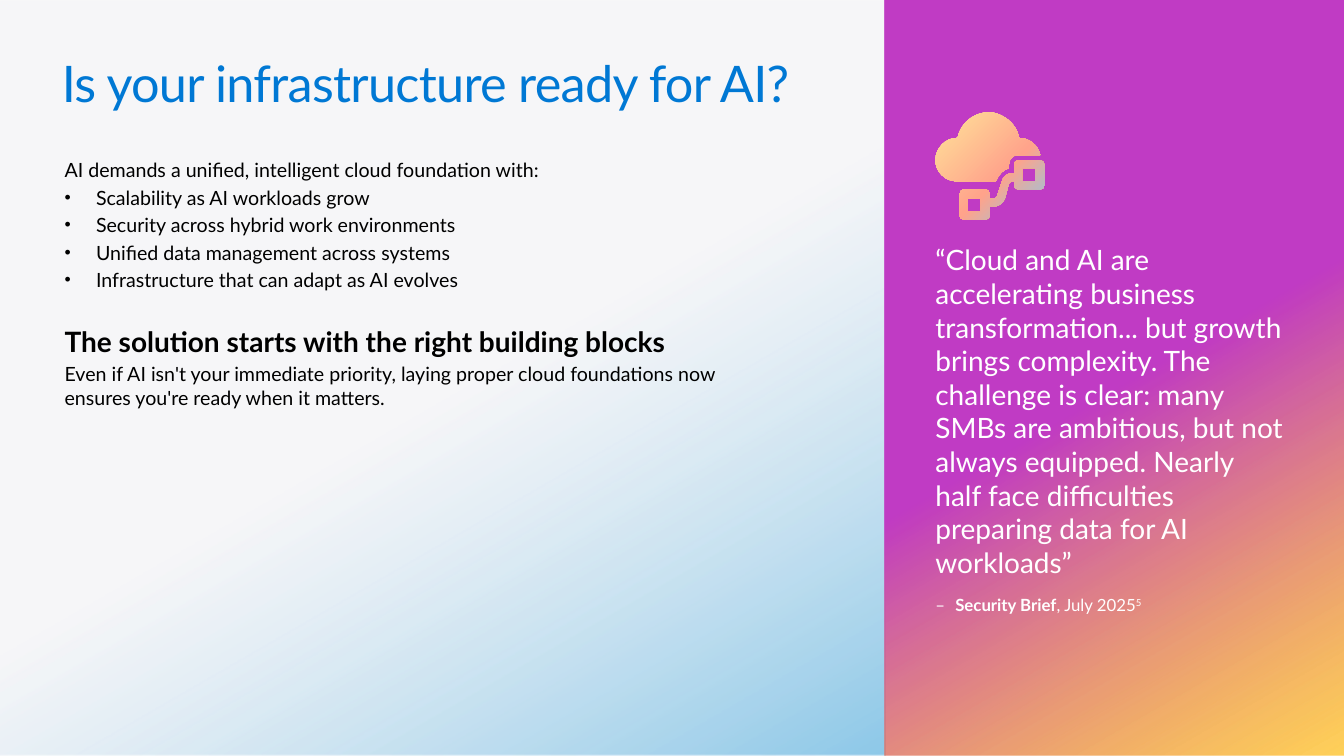
from itertools import chain

from lxml import etree
from pptx import Presentation
from pptx import util as u
from pptx.dml import color
from pptx.enum import shapes, text
from pptx.oxml import ns

FONT = "Lato"
LEFT, RIGHT = 46.1, 668.16  # text edges of the two panels
SPLIT = 632.16              # border between the panels

# Icon outlines in 1/100 inch: two numbers are a line, six are a curve
CLOUD = [
    (22, 25), (25, 9, 41, -3, 58, 0), (71, 3, 81, 13, 83, 25),
    (93, 25, 102, 32, 104, 42), (82, 42), (77, 42, 73, 46, 73, 51), (73, 55),
    (67, 57, 63, 61, 61, 66), (60, 68), (21, 68), (10, 68, 0, 59, 0, 47),
    (0, 35, 10, 25, 21, 25)]
NODES = [
    (78, 51), (78, 49, 80, 47, 82, 47), (104, 47), (106, 47, 108, 49, 108, 51),
    (108, 72), (108, 75, 106, 76, 104, 76), (82, 76), (80, 76, 78, 75, 78, 72),
    (78, 68), (76, 68), (75, 68, 74, 69, 73, 70), (69, 85),
    (67, 90, 63, 93, 58, 93), (54, 93), (54, 102), (54, 104, 52, 106, 50, 106),
    (28, 106), (26, 106, 24, 104, 24, 102), (24, 81), (24, 78, 26, 76, 28, 76),
    (50, 76), (52, 76, 54, 78, 54, 81), (54, 85), (58, 85),
    (59, 85, 61, 84, 61, 83), (66, 68), (67, 63, 72, 60, 76, 60), (78, 60)]


def rgb(code):
    return color.RGBColor.from_string(code)


def blend(shape, stops, angle=None):
    """Gradient of (place, colour, opacity); round when no angle is given."""
    props = shape._element.spPr
    fill = etree.Element(ns.qn("a:gradFill"), rotWithShape="1")
    row = etree.SubElement(fill, ns.qn("a:gsLst"))
    for place, code, alpha in stops:
        stop = etree.SubElement(row, ns.qn("a:gs"), pos=str(place * 1000))
        tint = etree.SubElement(stop, ns.qn("a:srgbClr"), val=code)
        if alpha < 100:
            etree.SubElement(tint, ns.qn("a:alpha"), val=str(alpha * 1000))
    if angle is None:
        way = etree.SubElement(fill, ns.qn("a:path"), path="circle")
        etree.SubElement(way, ns.qn("a:fillToRect"), l="100000", t="100000")
    else:
        etree.SubElement(fill, ns.qn("a:lin"), ang=str(angle * 60000), scaled="0")
    # The fill belongs right after the geometry
    props.insert(2, fill)
    shape.line.fill.background()
    shape.shadow.inherit = False


def panel(slide, x, wide, stops):
    box = slide.shapes.add_shape(
        shapes.MSO_SHAPE.RECTANGLE, u.Pt(x), 0, u.Pt(wide), u.Pt(540))
    blend(box, stops, 60)


def frame(slide, x, y, wide, high):
    body = slide.shapes.add_textbox(
        u.Pt(x), u.Pt(y), u.Pt(wide), u.Pt(high)).text_frame
    body.word_wrap = True
    body.vertical_anchor = text.MSO_ANCHOR.TOP
    body.margin_left = body.margin_right = 0
    body.margin_top = body.margin_bottom = 0
    return body


def para(body, first=False, before=0, hang=0, bullet=None):
    line = body.paragraphs[0] if first else body.add_paragraph()
    line.alignment = text.PP_ALIGN.LEFT
    if before:
        line.space_before = u.Pt(before)
    props = line._p.get_or_add_pPr()
    if hang:
        props.set("marL", str(u.Pt(hang)))
        props.set("indent", str(-u.Pt(hang)))
    if bullet:
        etree.SubElement(props, ns.qn("a:buSzPct"), val="90000")
        etree.SubElement(props, ns.qn("a:buFont"), typeface="Arial")
        etree.SubElement(props, ns.qn("a:buChar"), char=bullet)
    return line


def add(line, words, size, code, bold=False, **extra):
    run = line.add_run()
    run.text = words
    run.font.name = FONT
    run.font.size = u.Pt(size)
    run.font.bold = bold
    run.font.color.rgb = rgb(code)
    for key, value in extra.items():
        run._r.get_or_add_rPr().set(key, str(value))


def square(x, y, side=13):
    return [(x, y), (x, y + side), (x + side, y + side), (x + side, y)]


def scale(nums):
    return [u.Pt(n * 0.72) for n in nums]


def bend(shape, steps):
    """Turn the lines that stand for six numbers into curves."""
    marks = list(shape._element.iter(ns.qn("a:moveTo"), ns.qn("a:lnTo")))
    for mark, step in zip(marks, steps):
        if len(step) == 6:
            nums = scale(step)
            curve = etree.Element(ns.qn("a:cubicBezTo"))
            for x, y in zip(nums[::2], nums[1::2]):
                etree.SubElement(curve, ns.qn("a:pt"), x=str(x), y=str(y))
            mark.getparent().replace(mark, curve)


def icon(slide, x, y):
    rings = [CLOUD, NODES, square(86, 55), square(32, 85)]
    pen = slide.shapes.build_freeform(*scale(CLOUD[0]))
    for ring in rings:
        ends = [scale(step[-2:]) for step in ring]
        if ring is not CLOUD:
            pen.move_to(*ends[0])
        pen.add_line_segments(ends[1:], close=True)
    shape = pen.convert_to_shape(u.Pt(x), u.Pt(y))
    bend(shape, chain(*rings))
    blend(shape, [(0, "8DC8E8", 100), (40, "FFA38B", 100), (99, "FFE399", 100)])


def main():
    deck = Presentation()
    deck.slide_width, deck.slide_height = u.Pt(960), u.Pt(540)
    slide = deck.slides.add_slide(deck.slide_layouts[6])

    # Left panel and title
    panel(slide, 0, SPLIT, [(51, "F4F3F5", 68), (100, "8DC8E8", 100)])
    title = frame(slide, 44.2, 37.3, 572, 44)
    add(para(title, True), "Is your infrastructure ready for AI?", 36, "0078D4", spc=-50)

    # Needs and solution
    body = frame(slide, LEFT, 113, 495.4, 185)
    add(para(body, True), "AI demands a unified, intelligent cloud foundation with:",
        14, "000000")
    for need in ("Scalability as AI workloads grow",
                 "Security across hybrid work environments",
                 "Unified data management across systems",
                 "Infrastructure that can adapt as AI evolves"):
        add(para(body, before=2.8, hang=22.5, bullet="•"), need, 14, "000000")
    add(para(body, before=23.6), "The solution starts with the right building blocks",
        20, "000000", True)
    add(para(body, before=2.8),
        "Even if AI isn't your immediate priority, laying proper cloud foundations now "
        "ensures you're ready when it matters.", 14, "000000")

    # Right panel with quote
    panel(slide, SPLIT, 960 - SPLIT, [(51, "C03BC4", 100), (100, "FFB900", 65)])
    quote = frame(slide, RIGHT, 173.5, 249, 242.6)
    add(para(quote, True),
        "“Cloud and AI are accelerating business transformation... but growth brings "
        "complexity. The challenge is clear: many SMBs are ambitious, but not always "
        "equipped. Nearly half face difficulties preparing data for AI workloads”",
        20, "FFFFFF")

    # Credit line
    credit = para(frame(slide, RIGHT, 424.8, 193, 14.4), True, hang=14.2)
    add(credit, "–\t", 12, "FFFFFF")
    add(credit, "Security Brief", 12, "FFFFFF", True)
    add(credit, ", July 2025", 12, "FFFFFF")
    add(credit, "5", 12, "FFFFFF", baseline=30000)

    icon(slide, RIGHT, 80.6)
    deck.save("out.pptx")


if __name__ == "__main__":
    main()
